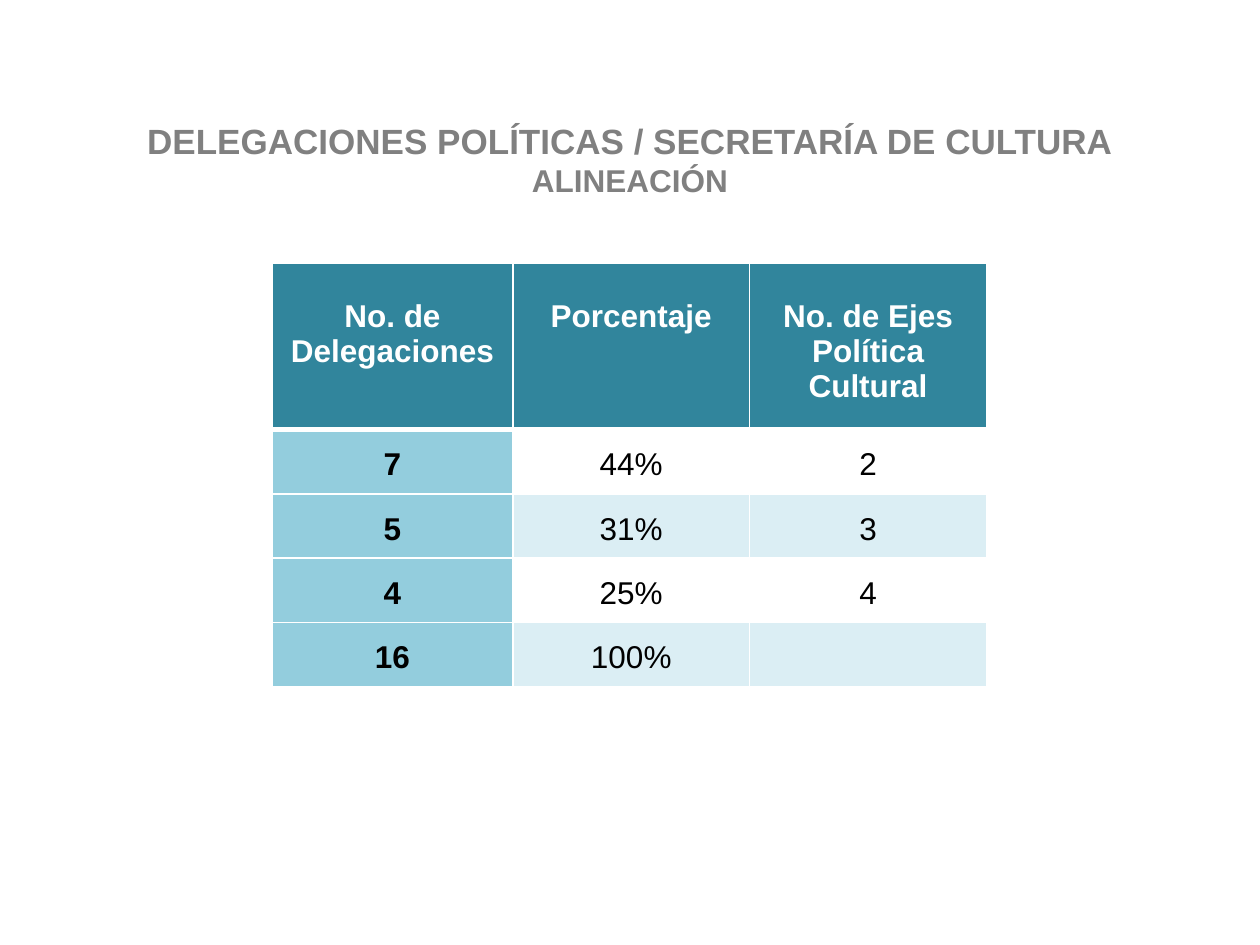
import pptx
import pptx.dml.color
import pptx.enum.text
import pptx.oxml
import pptx.oxml.ns
import pptx.util

Inches = pptx.util.Inches
RGBColor = pptx.dml.color.RGBColor

GRAY = RGBColor(0x80, 0x80, 0x80)
BLACK = RGBColor(0x00, 0x00, 0x00)
WHITE = RGBColor(0xFF, 0xFF, 0xFF)
TEAL = RGBColor(0x31, 0x85, 0x9C)
LIGHT_TEAL = RGBColor(0x93, 0xCD, 0xDD)
PALE_TEAL = RGBColor(0xDB, 0xEE, 0xF4)

HEADERS = ["No. de Delegaciones", "Porcentaje", "No. de Ejes Política Cultural"]
ROWS = [
    ["7", "44%", "2"],
    ["5", "31%", "3"],
    ["4", "25%", "4"],
    ["16", "100%", ""],
]
COLUMN_WIDTHS = [1.91, 1.88, 1.88]
HEADER_HEIGHT = 1.32
ROW_HEIGHT = 0.51


def add_text(paragraph, text, size=18, color=BLACK, bold=False, line_spacing=1.0):
    paragraph.alignment = pptx.enum.text.PP_ALIGN.CENTER
    paragraph.line_spacing = line_spacing
    run = paragraph.add_run()
    run.text = text
    run.font.name = "Arial"
    run.font.size = pptx.util.Pt(size)
    run.font.bold = bold
    run.font.color.rgb = color


def add_title(slide):
    box = slide.shapes.add_textbox(Inches(0.5), Inches(0.83), Inches(9), Inches(0.87))
    frame = box.text_frame
    frame.word_wrap = True
    frame.vertical_anchor = pptx.enum.text.MSO_ANCHOR.MIDDLE
    paragraph = frame.paragraphs[0]
    add_text(paragraph, "DELEGACIONES POLÍTICAS / SECRETARÍA DE CULTURA",
             size=20, color=GRAY, bold=True)
    paragraph.add_line_break()
    add_text(paragraph, "ALINEACIÓN", color=GRAY, bold=True)


def set_borders(cell, top=1, bottom=1):
    """Draw white borders, with widths in points."""
    properties = cell._tc.get_or_add_tcPr()
    widths = {"lnL": 1, "lnR": 1, "lnT": top, "lnB": bottom}
    for position, (side, width) in enumerate(widths.items()):
        line = pptx.oxml.parse_xml(
            f'<a:{side} {pptx.oxml.ns.nsdecls("a")} w="{pptx.util.Pt(width)}">'
            f'<a:solidFill><a:srgbClr val="{WHITE}"/></a:solidFill></a:{side}>'
        )
        properties.insert(position, line)


def format_cell(cell, text, fill, top_margin=0, top=1, bottom=1, **text_format):
    cell.margin_left = cell.margin_right = Inches(0.07)
    cell.margin_top, cell.margin_bottom = Inches(top_margin), 0
    cell.fill.solid()
    cell.fill.fore_color.rgb = fill
    set_borders(cell, top, bottom)
    if text:
        add_text(cell.text_frame.paragraphs[0], text, **text_format)


def add_alignment_table(slide):
    height = HEADER_HEIGHT + ROW_HEIGHT * len(ROWS)
    table = slide.shapes.add_table(
        len(ROWS) + 1, len(HEADERS), Inches(2.16), Inches(2.09),
        Inches(sum(COLUMN_WIDTHS)), Inches(height)).table
    for column, width in zip(table.columns, COLUMN_WIDTHS):
        column.width = Inches(width)
    for index, row in enumerate(table.rows):
        row.height = Inches(ROW_HEIGHT if index else HEADER_HEIGHT)

    # Header row, with a thick rule below
    for column, text in enumerate(HEADERS):
        format_cell(table.cell(0, column), text, TEAL, top_margin=0.28, bottom=3,
                    color=WHITE, bold=True)

    # Body rows: bold first column, alternating bands
    for row, values in enumerate(ROWS, start=1):
        band = WHITE if row % 2 else PALE_TEAL
        for column, text in enumerate(values):
            first = column == 0
            format_cell(table.cell(row, column), text, LIGHT_TEAL if first else band,
                        top=3 if row == 1 else 1, bold=first, line_spacing=1.5)


def main():
    presentation = pptx.Presentation()
    presentation.slide_width = Inches(10)
    presentation.slide_height = Inches(7.5)
    slide = presentation.slides.add_slide(presentation.slide_layouts[6])
    add_title(slide)
    add_alignment_table(slide)
    presentation.save("out.pptx")


if __name__ == "__main__":
    main()
